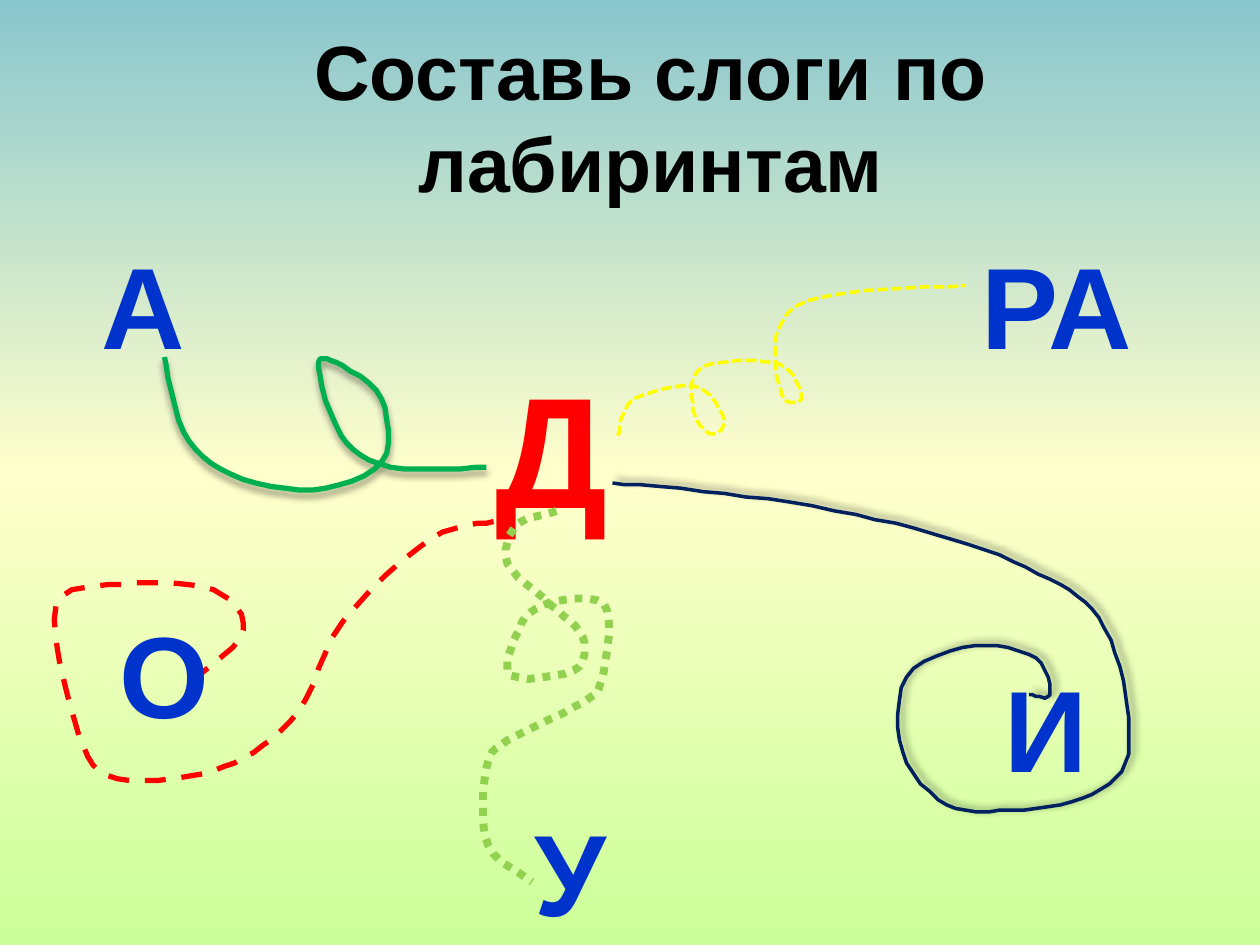
from dataclasses import dataclass
from typing import Optional

import lxml.etree
import pptx
import pptx.dml.color
import pptx.enum.dml
import pptx.enum.text
import pptx.oxml.ns
import pptx.util

Pt = pptx.util.Pt
Dash = pptx.enum.dml.MSO_LINE
Anchor = pptx.enum.text.MSO_ANCHOR


@dataclass(frozen=True)
class Theme:
    font: str = "Arial"
    title_size: int = 44
    consonant_size: int = 90
    syllable_size: int = 66
    title: str = "000000"
    consonant: str = "FF0000"
    syllable: str = "0033CC"
    shadow: str = "000000"
    green: str = "00B050"
    yellow: str = "FFFF00"
    lime: str = "92D050"
    navy: str = "002060"
    red: str = "FF0000"
    sky: tuple = ("8AC6CD", "FFFFCC", "CCFF99")


@dataclass(frozen=True)
class Label:
    text: str
    left: float
    top: float
    width: float
    height: float
    size: int
    color: str
    anchor: Anchor = Anchor.TOP


@dataclass(frozen=True)
class Trail:
    color: str
    width: float
    points: tuple
    dash: Optional[Dash] = None
    shadow_angle: Optional[int] = None


THEME = Theme()
STEPS = 6

TITLE = Label("Составь слоги по лабиринтам", 48, 21, 648, 90,
              THEME.title_size, THEME.title, Anchor.MIDDLE)
CONSONANT = Label("Д", 253, 197, 124, 117, THEME.consonant_size, THEME.consonant)
SYLLABLES = [
    Label(text, left, top, 124, 87, THEME.syllable_size, THEME.syllable)
    for text, left, top in (
        ("РА", 542, 130), ("И", 536, 372), ("У", 264, 454),
        ("О", 32, 341), ("А", 20, 130),
    )
]

TRAILS = [
    Trail(THEME.green, 3, (
        (278, 267), (223, 267), (195, 249), (182, 210), (192, 207), (218, 228),
        (218, 264), (179, 280), (132, 271), (105, 247), (94, 204),
    ), shadow_angle=90),
    Trail(THEME.yellow, 2, (
        (353, 249), (362, 228), (398, 221), (414, 240), (406, 248), (396, 234),
        (401, 210), (445, 208), (458, 228), (447, 226), (444, 190), (469, 170),
        (552, 163),
    ), dash=Dash.SQUARE_DOT),
    Trail(THEME.lime, 4.5, (
        (318, 292), (295, 300), (290, 322), (315, 346), (333, 364), (328, 383),
        (292, 386), (295, 363), (310, 346), (345, 345), (345, 384), (334, 401),
        (290, 423), (278, 439), (279, 483), (304, 504),
    ), dash=Dash.ROUND_DOT),
    Trail(THEME.navy, 2, (
        (350, 276), (414, 282), (489, 294), (553, 311), (600, 331), (628, 353),
        (643, 396), (643, 436), (619, 456), (578, 463), (541, 460), (516, 430),
        (518, 387), (557, 369), (592, 376), (600, 397), (588, 397),
    ), shadow_angle=315),
    Trail(THEME.red, 3, (
        (282, 298), (246, 308), (196, 355), (171, 406), (139, 433), (105, 444),
        (61, 443), (43, 413), (32, 346), (70, 334), (122, 337), (139, 360),
        (113, 387),
    ), dash=Dash.DASH),
]


def rgb(value: str) -> pptx.dml.color.RGBColor:
    return pptx.dml.color.RGBColor.from_string(value)


def add_node(parent, tag: str, **attributes):
    return lxml.etree.SubElement(parent, pptx.oxml.ns.qn(tag), attributes)


def blend(a: float, b: float, c: float, d: float, t: float) -> float:
    return b + t / 2 * (c - a + t * (2 * a - 5 * b + 4 * c - d
                                     + t * (3 * (b - c) + d - a)))


def smooth_curve(points: tuple) -> list:
    padded = (points[0], *points, points[-1])
    curve = [points[0]]
    for knots in zip(padded, padded[1:], padded[2:], padded[3:]):
        for step in range(1, STEPS + 1):
            curve.append(tuple(blend(*axis, step / STEPS) for axis in zip(*knots)))
    return curve


def paint_background(page, colors: tuple) -> None:
    fill = page.background.fill
    fill.gradient()
    fill.gradient_angle = 270
    stop_list = page.element.xpath(".//a:gsLst")[0]
    for stop in list(stop_list):
        stop_list.remove(stop)
    for index, color in enumerate(colors):
        position = index * 100000 // (len(colors) - 1)
        stop = add_node(stop_list, "a:gs", pos=str(position))
        add_node(stop, "a:srgbClr", val=color)


def draw_label(page, label: Label) -> None:
    box = page.shapes.add_textbox(
        Pt(label.left), Pt(label.top), Pt(label.width), Pt(label.height))
    frame = box.text_frame
    frame.word_wrap = True
    frame.vertical_anchor = label.anchor
    para = frame.paragraphs[0]
    para.text = label.text
    para.alignment = pptx.enum.text.PP_ALIGN.CENTER
    para.font.name = THEME.font
    para.font.size = Pt(label.size)
    para.font.bold = True
    para.font.color.rgb = rgb(label.color)


def draw_trail(page, trail: Trail) -> None:
    start, *rest = smooth_curve(trail.points)
    builder = page.shapes.build_freeform(*start, scale=Pt(1))
    builder.add_line_segments(rest, close=False)
    curve = builder.convert_to_shape()
    curve.fill.background()
    curve.line.color.rgb = rgb(trail.color)
    curve.line.width = Pt(trail.width)
    if trail.dash is not None:
        curve.line.dash_style = trail.dash
    curve.shadow.inherit = False
    if trail.shadow_angle is not None:
        effects = curve.element.xpath(".//a:effectLst")[0]
        shadow = add_node(effects, "a:outerShdw", blurRad=str(Pt(4)), dist=str(Pt(3)),
                          dir=str(trail.shadow_angle * 60000), rotWithShape="0")
        color = add_node(shadow, "a:srgbClr", val=THEME.shadow)
        add_node(color, "a:alpha", val="40000")


def main() -> None:
    deck = pptx.Presentation()
    deck.slide_width, deck.slide_height = Pt(720), Pt(540)
    page = deck.slides.add_slide(deck.slide_layouts[6])
    paint_background(page, THEME.sky)
    draw_label(page, TITLE)
    draw_label(page, CONSONANT)
    for trail in TRAILS:
        draw_trail(page, trail)
    for syllable in SYLLABLES:
        draw_label(page, syllable)
    deck.save("out.pptx")


if __name__ == "__main__":
    main()
